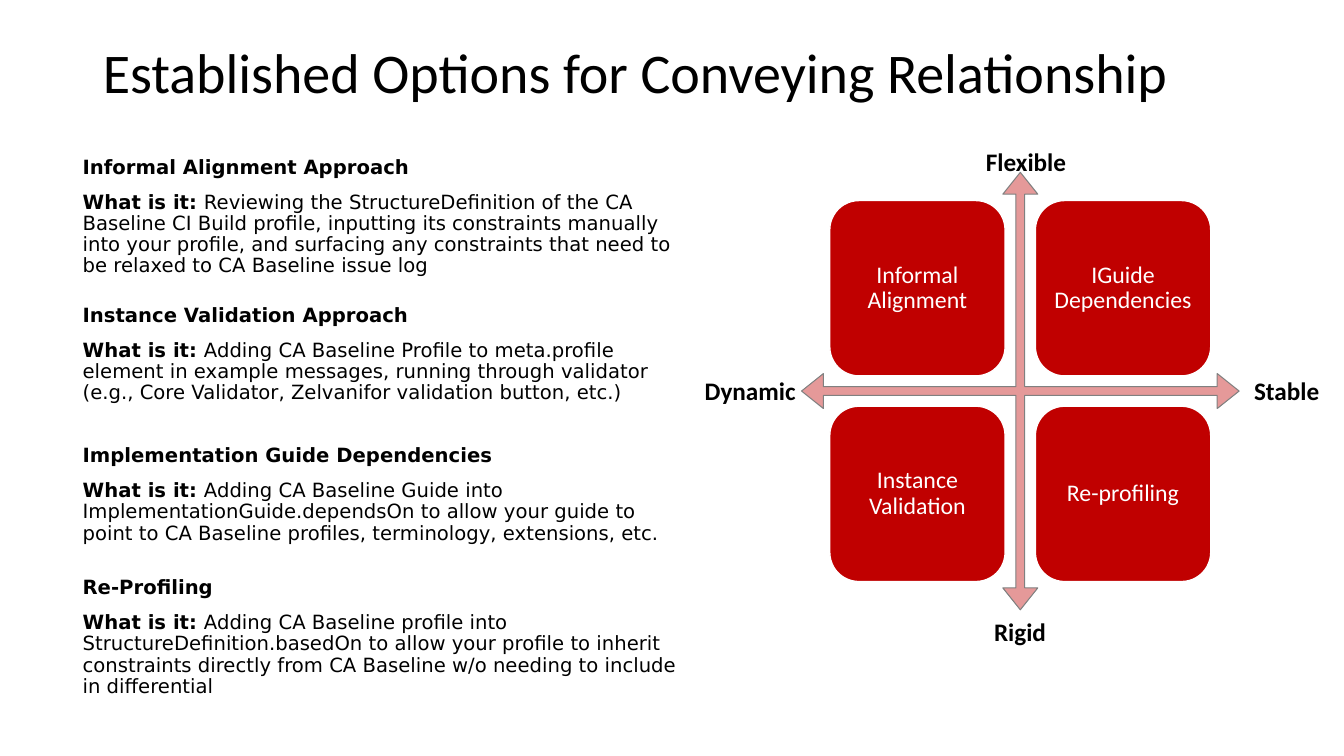
"""Build the slide on established options for conveying relationship."""
from dataclasses import dataclass

from lxml import etree
from pptx import Presentation
from pptx.dml.color import RGBColor
from pptx.enum.shapes import MSO_SHAPE
from pptx.enum.text import MSO_ANCHOR, MSO_AUTO_SIZE, PP_ALIGN
from pptx.oxml.ns import qn
from pptx.util import Emu, Inches, Pt

BLACK = RGBColor(0x00, 0x00, 0x00)
WHITE = RGBColor(0xFF, 0xFF, 0xFF)
RED = RGBColor(0xC0, 0x00, 0x00)
GREY = RGBColor(0x80, 0x80, 0x80)
TOP, MIDDLE = MSO_ANCHOR.TOP, MSO_ANCHOR.MIDDLE
LEFT, CENTER = PP_ALIGN.LEFT, PP_ALIGN.CENTER
NO_AUTOFIT = MSO_AUTO_SIZE.NONE
QUAD_ARROW, ROUNDED = MSO_SHAPE.QUAD_ARROW, MSO_SHAPE.ROUNDED_RECTANGLE
SLIDE_WIDTH, SLIDE_HEIGHT = Inches(13.33), Inches(7.5)
COMPARISON_LAYOUT = 4


@dataclass(frozen=True)
class Box:
    """Left, top, width and height in percent of the slide's size."""
    left: float
    top: float
    width: float
    height: float

    def emu(self) -> tuple[Emu, Emu, Emu, Emu]:
        """Return the box in slide units."""
        return (Emu(int(SLIDE_WIDTH * self.left / 100)),
                Emu(int(SLIDE_HEIGHT * self.top / 100)),
                Emu(int(SLIDE_WIDTH * self.width / 100)),
                Emu(int(SLIDE_HEIGHT * self.height / 100)))


@dataclass(frozen=True)
class Approach:
    """One described approach in the left column."""
    heading: str
    description: str
    top: float
    height: float


@dataclass(frozen=True)
class AxisLabel:
    """The word at one end of an axis."""
    word: str
    box: Box


@dataclass(frozen=True)
class Quadrant:
    """One tile of the two-by-two matrix."""
    option: str
    column: int
    row: int


TITLE_BOX = Box(6.9, 5.33, 86.27, 19.33)
AXES_BOX = Box(59.64, 22.8, 32.56, 57.87)
FIRST_TILE = Box(61.74, 26.53, 13.05, 23.2)
COLUMN_PITCH, ROW_PITCH = 15.3, 27.2

APPROACHES = (
    Approach("Informal Alignment Approach",
             "Reviewing the StructureDefinition of the CA Baseline CI Build profile, "
             "inputting its constraints manually into your profile, and surfacing any "
             "constraints that need to be relaxed to CA Baseline issue log", 20.13, 26.27),
    Approach("Instance Validation Approach",
             "Adding CA Baseline Profile to meta.profile element in example messages, "
             "running through validator (e.g., Core Validator, Zelvanifor validation "
             "button, etc.)", 39.73, 21.07),
    Approach("Implementation Guide Dependencies",
             "Adding CA Baseline Guide into ImplementationGuide.dependsOn to allow your "
             "guide to point to CA Baseline profiles, terminology, extensions, etc.",
             58.27, 20.4),
    Approach("Re-Profiling",
             "Adding CA Baseline profile into StructureDefinition.basedOn to allow your "
             "profile to inherit constraints directly from CA Baseline w/o needing to "
             "include in differential", 75.73, 20.4),
)
AXIS_LABELS = (
    AxisLabel("Stable", Box(92.57, 48.93, 7.43, 5.33)),
    AxisLabel("Rigid", Box(73.22, 80.93, 7.73, 5.33)),
    AxisLabel("Flexible", Box(72.62, 18.67, 7.73, 5.33)),
    AxisLabel("Dynamic", Box(51.69, 48.93, 8.48, 5.33)),
)
QUADRANTS = (
    Quadrant("Informal Alignment", 0, 0),
    Quadrant("IGuide Dependencies", 1, 0),
    Quadrant("Instance Validation", 0, 1),
    Quadrant("Re-profiling", 1, 1),
)


def write(paragraph, text: str, *, size: float, font: str = "Calibri", color: RGBColor = BLACK,
          bold: bool = False, align: PP_ALIGN = LEFT, spacing: float = 0.9,
          before: float = 0) -> None:
    """Add a formatted run to a paragraph."""
    paragraph.alignment = align
    paragraph.line_spacing = spacing
    paragraph.space_before = Pt(before)
    run = paragraph.add_run()
    run.text = text
    run.font.name = font
    run.font.size = Pt(size)
    run.font.bold = bold
    run.font.color.rgb = color


def place(placeholder, box: Box):
    """Move a placeholder and return its prepared text frame."""
    placeholder.left, placeholder.top, placeholder.width, placeholder.height = box.emu()
    frame = placeholder.text_frame
    frame.word_wrap = True
    frame.auto_size = NO_AUTOFIT
    frame.vertical_anchor = TOP
    return frame


def remove_bullet(paragraph) -> None:
    """Set a paragraph flush left without a bullet."""
    properties = paragraph._p.get_or_add_pPr()
    properties.set("marL", "0")
    properties.set("indent", "0")
    etree.SubElement(properties, qn("a:buNone"))


def fill_approach(placeholder, approach: Approach) -> None:
    """Write one approach into a body placeholder."""
    frame = place(placeholder, Box(5.4, approach.top, 46.29, approach.height))
    style = {"size": 14, "font": "DejaVu Sans", "before": 10}
    heading, description = frame.paragraphs[0], frame.add_paragraph()
    write(heading, approach.heading, bold=True, **style)
    write(description, "What is it: ", bold=True, **style)
    write(description, approach.description, **style)
    for paragraph in frame.paragraphs:
        remove_bullet(paragraph)


def draw_shape(slide, kind: MSO_SHAPE, box: Box, line: RGBColor, line_width: float):
    """Draw a red preset shape with an outline."""
    shape = slide.shapes.add_shape(kind, *box.emu())
    shape.shadow.inherit = False
    shape.fill.solid()
    shape.fill.fore_color.rgb = RED
    shape.line.color.rgb = line
    shape.line.width = Pt(line_width)
    return shape


def draw_axes(slide) -> None:
    """Draw the translucent four-way arrow."""
    axes = draw_shape(slide, QUAD_ARROW, AXES_BOX, GREY, 0.75)
    for index, share in enumerate((0.02, 0.04, 0.05)):
        axes.adjustments[index] = share
    fill_color = axes._element.spPr.find(qn("a:solidFill"))[0]
    etree.SubElement(fill_color, qn("a:alpha"), val="40000")


def draw_quadrant(slide, quadrant: Quadrant) -> None:
    """Draw one tile of the matrix."""
    box = Box(FIRST_TILE.left + quadrant.column * COLUMN_PITCH,
              FIRST_TILE.top + quadrant.row * ROW_PITCH, FIRST_TILE.width, FIRST_TILE.height)
    frame = draw_shape(slide, ROUNDED, box, WHITE, 1).text_frame
    frame.word_wrap = True
    frame.vertical_anchor = MIDDLE
    frame.margin_left = frame.margin_right = Inches(0.07)
    frame.margin_top = frame.margin_bottom = Inches(0.07)
    write(frame.paragraphs[0], quadrant.option, size=17, color=WHITE, align=CENTER)


def draw_axis_label(slide, label: AxisLabel) -> None:
    """Write the word at one end of an axis."""
    frame = slide.shapes.add_textbox(*label.box.emu()).text_frame
    frame.word_wrap = True
    write(frame.paragraphs[0], label.word, size=18, bold=True, spacing=1.0)


def main() -> None:
    """Build and save the presentation."""
    deck = Presentation()
    deck.slide_width, deck.slide_height = SLIDE_WIDTH, SLIDE_HEIGHT
    slide = deck.slides.add_slide(deck.slide_layouts[COMPARISON_LAYOUT])
    title, *bodies = slide.placeholders
    write(place(title, TITLE_BOX).paragraphs[0],
          "Established Options for Conveying Relationship", size=40)
    for body, approach in zip(bodies, APPROACHES):
        fill_approach(body, approach)
    draw_axes(slide)
    for quadrant in QUADRANTS:
        draw_quadrant(slide, quadrant)
    for label in AXIS_LABELS:
        draw_axis_label(slide, label)
    deck.save("out.pptx")


if __name__ == "__main__":
    main()
